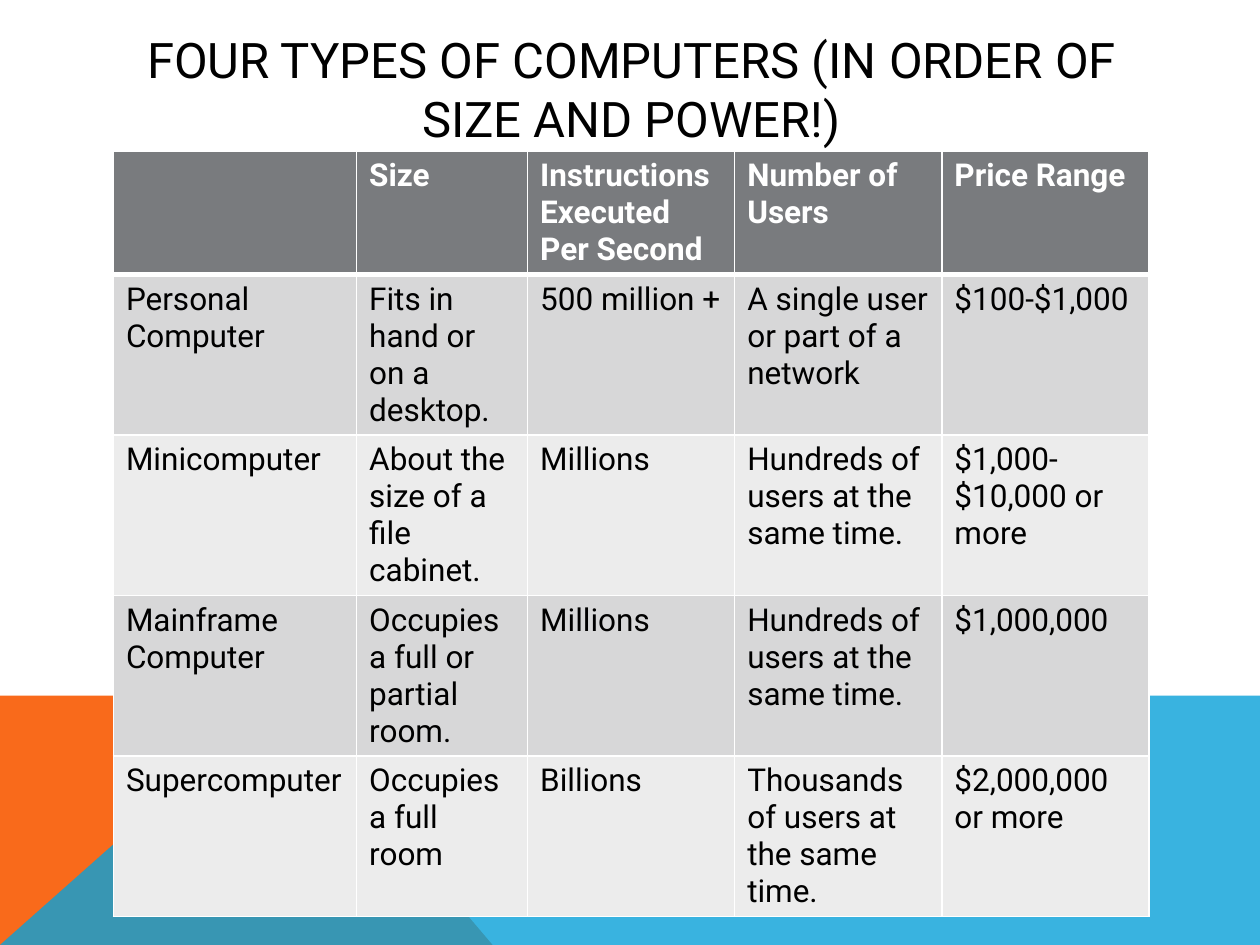
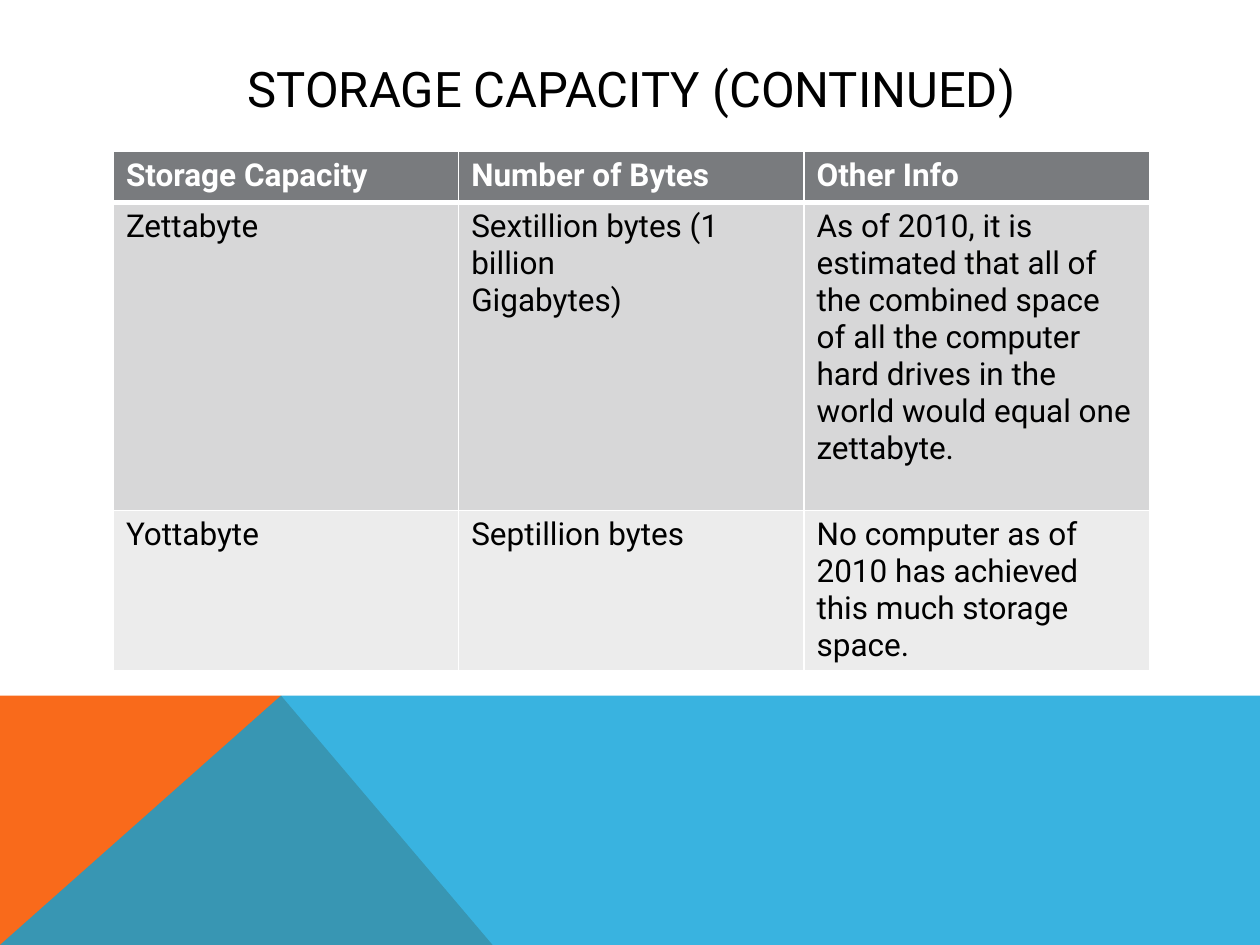
from lxml.etree import SubElement
from pptx import Presentation
from pptx.dml.color import RGBColor as Rgb
from pptx.enum.text import MSO_ANCHOR as Anchor, MSO_AUTO_SIZE as AutoSize, PP_ALIGN as Align
from pptx.oxml.ns import qn
from pptx.util import Pt

COLOURS = {
    "white": "FFFFFF",
    "black": "000000",
    "orange": "F96A1B",
    "blue": "08A1D9",
    "header": "797B7E",
    "odd": "D7D7D8",
    "even": "ECECEC",
}
FONT = "Roboto"
TITLE_ONLY = 5
WIDTH, HEIGHT = 720, 540
LEFT, TABLE_TOP, CONTENT_WIDTH = 64.8, 86.4, 592
BAND_TOP, PEAK = 397.5, 160.6

COMPUTER_ROWS = [
    ["", "Size", "Instructions Executed Per Second", "Number of Users", "Price Range"],
    ["Personal Computer", "Fits in hand or on a desktop.", "500 million +",
     "A single user or part of a network", "$100-$1,000"],
    ["Minicomputer", "About the size of a file cabinet.", "Millions",
     "Hundreds of users at the same time.", "$1,000-$10,000 or more"],
    ["Mainframe Computer", "Occupies a full or partial room.", "Millions",
     "Hundreds of users at the same time.", "$1,000,000"],
    ["Supercomputer", "Occupies a full room", "Billions",
     "Thousands of users at the same time.", "$2,000,000 or more"],
]
STORAGE_ROWS = [
    ["Storage Capacity", "Number of Bytes", "Other Info"],
    ["Zettabyte", "Sextillion bytes (1 billion\nGigabytes)",
     "As of 2010, it is estimated that all of the combined space of all the "
     "computer hard drives in the world would equal one zettabyte."],
    ["Yottabyte", "Septillion bytes",
     "No computer as of 2010 has achieved this much storage space."],
]


class SlideWriter:
    """Holds the deck style and the current slide, and adds elements to it."""

    def __init__(self):
        self.deck = Presentation()
        self.deck.slide_width, self.deck.slide_height = Pt(WIDTH), Pt(HEIGHT)
        self.layout = self.deck.slide_layouts[TITLE_ONLY]
        self.page = None

    def add_page(self, title):
        self.page = self.deck.slides.add_slide(self.layout)
        box = self.page.shapes.title
        box.left, box.top = Pt(LEFT), Pt(28.8)
        box.width, box.height = Pt(CONTENT_WIDTH), Pt(43.2)
        frame = box.text_frame
        frame.word_wrap = True
        frame.auto_size = AutoSize.NONE
        frame.vertical_anchor = Anchor.MIDDLE
        para = frame.paragraphs[0]
        para.alignment = Align.CENTER
        self.add_span(para, title, 28, "black")

    def add_span(self, para, text, size, colour, bold=False):
        span = para.add_run()
        span.text = text
        font = span.font
        font.name, font.size, font.bold = FONT, Pt(size), bold
        font.color.rgb = Rgb.from_string(COLOURS[colour])

    def add_layout_band(self, points, colour, opacity=100):
        corners = [(Pt(x), Pt(y)) for x, y in points]
        builder = self.page.shapes.build_freeform(*corners[0])
        builder.add_line_segments(corners[1:], close=True)
        band = builder.convert_to_shape()
        band.shadow.inherit = False
        band.line.fill.background()
        band.fill.solid()
        band.fill.fore_color.rgb = Rgb.from_string(COLOURS[colour])
        if opacity < 100:
            tint = next(band.element.iter(qn("a:srgbClr")))
            SubElement(tint, qn("a:alpha"), val=str(opacity * 1000))
        self.layout.placeholders[0].element.addprevious(band.element)

    def add_borders(self, cell, row):
        properties = cell._tc.get_or_add_tcPr()
        widths = {"L": 1, "R": 1, "T": 3 if row == 1 else 1, "B": 3 if row == 0 else 1}
        for side, width in widths.items():
            line = SubElement(properties, qn(f"a:ln{side}"), w=str(Pt(width)))
            fill = SubElement(line, qn("a:solidFill"))
            SubElement(fill, qn("a:srgbClr"), val=COLOURS["white"])

    def fill_cell(self, cell, row, text):
        self.add_borders(cell, row)
        shade = "header" if row == 0 else "odd" if row % 2 else "even"
        cell.fill.solid()
        cell.fill.fore_color.rgb = Rgb.from_string(COLOURS[shade])
        frame = cell.text_frame
        for index, line in enumerate(text.split("\n") if text else []):
            para = frame.add_paragraph() if index else frame.paragraphs[0]
            self.add_span(para, line, 18, "black" if row else "white", bold=row == 0)

    def add_table(self, rows, widths, heights):
        table = self.page.shapes.add_table(
            len(rows), len(widths), Pt(LEFT), Pt(TABLE_TOP),
            Pt(sum(widths)), Pt(sum(heights))).table
        for column, width in zip(table.columns, widths):
            column.width = Pt(width)
        for row, (texts, height) in enumerate(zip(rows, heights)):
            table.rows[row].height = Pt(height)
            for column, text in enumerate(texts):
                self.fill_cell(table.cell(row, column), row, text)


def main():
    writer = SlideWriter()
    writer.add_page("FOUR TYPES OF COMPUTERS (IN ORDER OF SIZE AND POWER!)")
    writer.add_layout_band(
        [(0, HEIGHT), (0, BAND_TOP), (PEAK, BAND_TOP), (281.5, HEIGHT)], "orange")
    writer.add_layout_band(
        [(0, HEIGHT), (PEAK, BAND_TOP), (WIDTH, BAND_TOP), (WIDTH, HEIGHT)], "blue", 80)
    writer.add_table(COMPUTER_ROWS, [139, 97.7] + [118.4] * 3, [70.5] + [91.6] * 4)

    writer.add_page("STORAGE CAPACITY (CONTINUED)")
    writer.add_table(STORAGE_ROWS, [CONTENT_WIDTH / 3] * 3, [29.2, 176, 91.6])
    writer.deck.save("out.pptx")


if __name__ == "__main__":
    main()
